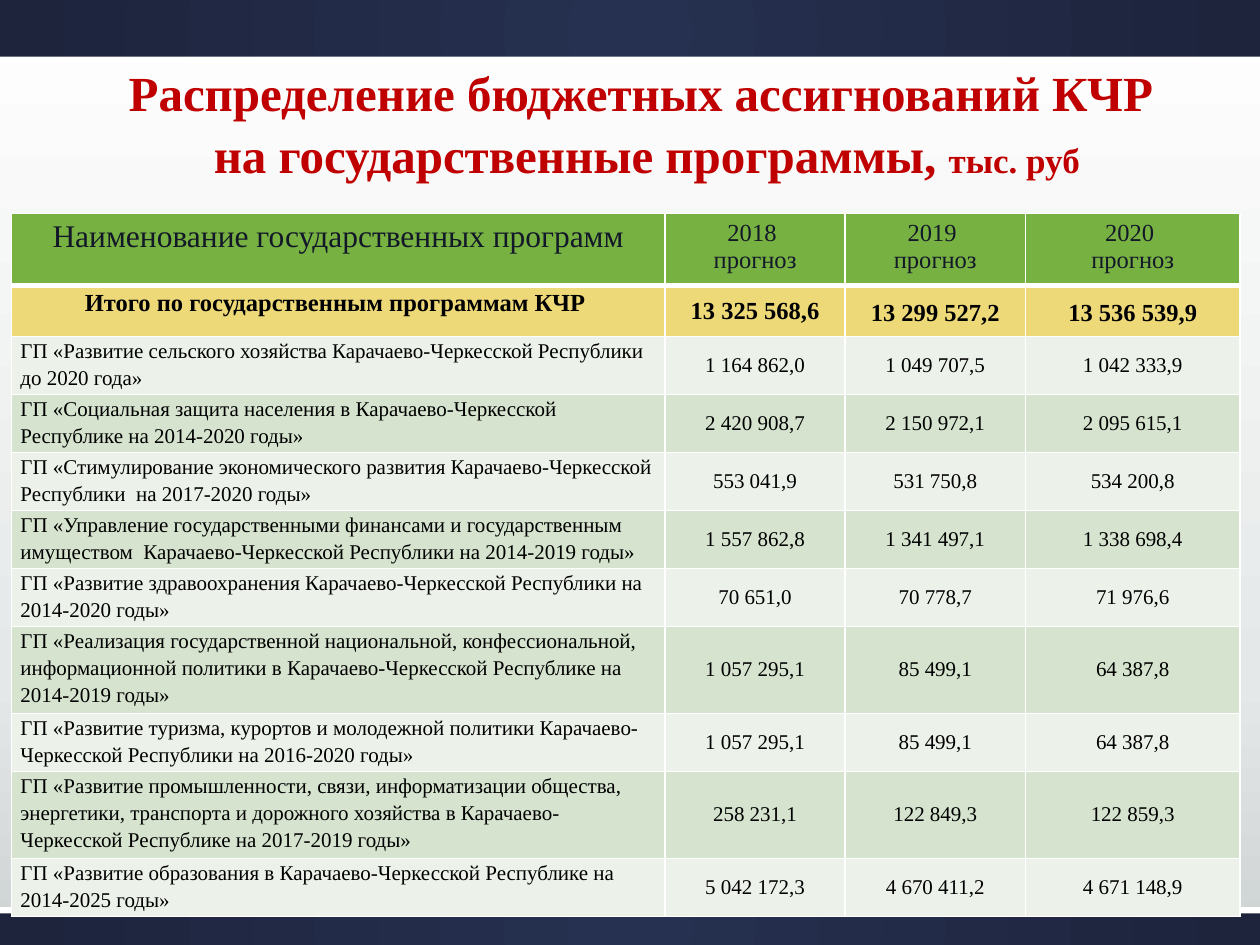
from lxml.etree import SubElement
from pptx import Presentation
from pptx.dml.color import RGBColor
from pptx.enum.shapes import MSO_SHAPE
from pptx.enum.text import MSO_ANCHOR, PP_ALIGN
from pptx.oxml.ns import qn
from pptx.util import Pt

FONT = "Times New Roman"
C = {"title": "C00000", "head": "77B142", "head_text": "131828", "total": "EED978",
     "light": "ECF2E9", "green": "D6E4CF", "text": "000000", "white": "FFFFFF",
     "navy": "263050", "dark": "1D243C", "grey": "E5E8E8", "steel": "CDD2D2"}

TITLE = [[("Распределение бюджетных ассигнований КЧР", 28)],
         [(" на государственные программы, ", 28), ("тыс. руб", 20)]]
HEADER = ["Наименование государственных программ",
          "2018 \nпрогноз", "2019 \nпрогноз", "2020 \nпрогноз"]
TOTAL = ["Итого по государственным программам КЧР ",
         "13 325 568,6", "13 299 527,2", "13 536 539,9"]
PROGRAMS = [
    ["ГП «Развитие сельского хозяйства Карачаево-Черкесской Республики до 2020 года»",
     "1 164 862,0", "1 049 707,5", "1 042 333,9"],
    ["ГП «Социальная защита населения в Карачаево-Черкесской Республике на 2014-2020 годы»",
     "2 420 908,7", "2 150 972,1", "2 095 615,1"],
    ["ГП «Стимулирование экономического развития Карачаево-Черкесской Республики  на 2017-2020 годы»",
     "553 041,9", "531 750,8", "534 200,8"],
    ["ГП «Управление государственными финансами и государственным имуществом  "
     "Карачаево-Черкесской Республики на 2014-2019 годы»",
     "1 557 862,8", "1 341 497,1", "1 338 698,4"],
    ["ГП «Развитие здравоохранения Карачаево-Черкесской Республики на 2014-2020 годы»",
     "70 651,0", "70 778,7", "71 976,6"],
    ["ГП «Реализация государственной национальной, конфессиональной, информационной политики "
     "в Карачаево-Черкесской Республике на 2014-2019 годы»",
     "1 057 295,1", "85 499,1", "64 387,8"],
    ["ГП «Развитие туризма, курортов и молодежной политики Карачаево-Черкесской Республики "
     "на 2016-2020 годы»",
     "1 057 295,1", "85 499,1", "64 387,8"],
    ["ГП «Развитие промышленности, связи, информатизации общества, энергетики, транспорта "
     "и дорожного хозяйства в Карачаево-Черкесской Республике на 2017-2019 годы»",
     "258 231,1", "122 849,3", "122 859,3"],
    ["ГП «Развитие образования в Карачаево-Черкесской Республике на 2014-2025 годы»",
     "5 042 172,3", "4 670 411,2", "4 671 148,9"],
]
ROWS = [HEADER, TOTAL] + PROGRAMS
COL_WIDTHS = [373.3, 103, 103, 122.7]
TWO_LINES, THREE_LINES = 33.14, 49.7
ROW_HEIGHTS = [41.2, 29.1] + [THREE_LINES if i in (5, 7) else TWO_LINES
                              for i in range(len(PROGRAMS))]
BANDS = [(518.4, 21.6, "navy"), (518.4, 3.6, "white"), (0, 36, "navy"), (32.4, 3.6, "white")]


def rgb(name):
    return RGBColor.from_string(C[name])


def set_gradient(fill, element, stops, radial=False):
    fill.gradient()
    grad = element.find(".//" + qn("a:gradFill"))
    grad[:] = []
    gs_list = SubElement(grad, qn("a:gsLst"))
    for pos, name in stops:
        gs = SubElement(gs_list, qn("a:gs"), pos=str(pos * 1000))
        SubElement(gs, qn("a:srgbClr"), val=C[name])
    if radial:
        circle = SubElement(grad, qn("a:path"), path="circle")
        SubElement(circle, qn("a:fillToRect"), l="50000", t="50000", r="50000", b="50000")
    else:
        SubElement(grad, qn("a:lin"), ang="5400000", scaled="0")


def set_borders(cell, bottom):
    tcPr = cell._tc.get_or_add_tcPr()
    for i, (side, width) in enumerate([("L", 1), ("R", 1), ("T", 1), ("B", bottom)]):
        ln = tcPr.makeelement(qn("a:ln" + side), {"w": str(Pt(width))})
        solid = SubElement(ln, qn("a:solidFill"))
        SubElement(solid, qn("a:srgbClr"), val=C["white"])
        tcPr.insert(i, ln)


def row_style(r):
    if r == 0:
        return "head", "head_text", 14, False
    if r == 1:
        return "total", "text", 14, True
    return ("green" if r % 2 else "light"), "text", 12, False


def fill_cell(cell, r, c, text):
    fill, color, size, bold = row_style(r)
    cell.fill.solid()
    cell.fill.fore_color.rgb = rgb(fill)
    if r:
        cell.margin_left = cell.margin_right = Pt(5)
        cell.margin_top = cell.margin_bottom = 0
        if c:
            cell.vertical_anchor = MSO_ANCHOR.MIDDLE
    cell.text = text
    for p in cell.text_frame.paragraphs:
        p.alignment = PP_ALIGN.CENTER if c or r < 2 else PP_ALIGN.LEFT
        if (r and c == 0) or (r == 1 and c > 1):
            p.line_spacing = 1.15
        p.font.name = FONT
        p.font.size = Pt(18 if r == c == 0 else size)
        p.font.bold = bold
        p.font.color.rgb = rgb(color)
    set_borders(cell, 1 if r else 3)


def add_title(s):
    sp = s.shapes.title
    sp.left, sp.top, sp.width, sp.height = Pt(63.4), Pt(32), Pt(605.5), Pt(75)
    tf = sp.text_frame
    tf.word_wrap = False
    tf.vertical_anchor = MSO_ANCHOR.MIDDLE
    for i, runs in enumerate(TITLE):
        p = tf.add_paragraph() if i else tf.paragraphs[0]
        p.alignment = PP_ALIGN.CENTER
        p.line_spacing = 1.05
        p.space_before = Pt(0)
        p.font.name, p.font.bold = FONT, True
        p.font.color.rgb = rgb("title")
        for text, size in runs:
            r = p.add_run()
            r.text, r.font.size = text, Pt(size)


def add_bands(s):
    for top, height, name in BANDS:
        sp = s.shapes.add_shape(MSO_SHAPE.RECTANGLE, 0, Pt(top), Pt(720), Pt(height))
        sp.shadow.inherit = False
        sp.line.fill.background()
        if name == "navy":
            set_gradient(sp.fill, sp._element, [(0, "navy"), (100, "dark")], radial=True)
        else:
            sp.fill.solid()
            sp.fill.fore_color.rgb = rgb(name)


def add_programs_table(s):
    table = s.shapes.add_table(len(ROWS), len(COL_WIDTHS), Pt(6.7), Pt(122),
                               Pt(sum(COL_WIDTHS)), Pt(sum(ROW_HEIGHTS))).table
    for col, width in zip(table.columns, COL_WIDTHS):
        col.width = Pt(width)
    for r, (height, values) in enumerate(zip(ROW_HEIGHTS, ROWS)):
        table.rows[r].height = Pt(height)
        for c, text in enumerate(values):
            fill_cell(table.cell(r, c), r, c, text)


def main():
    prs = Presentation()
    prs.slide_width, prs.slide_height = Pt(720), Pt(540)
    s = prs.slides.add_slide(prs.slide_layouts[5])
    set_gradient(s.background.fill, s._element, [(0, "white"), (72, "grey"), (100, "steel")])
    add_bands(s)
    add_programs_table(s)
    add_title(s)
    prs.save("out.pptx")


if __name__ == "__main__":
    main()
